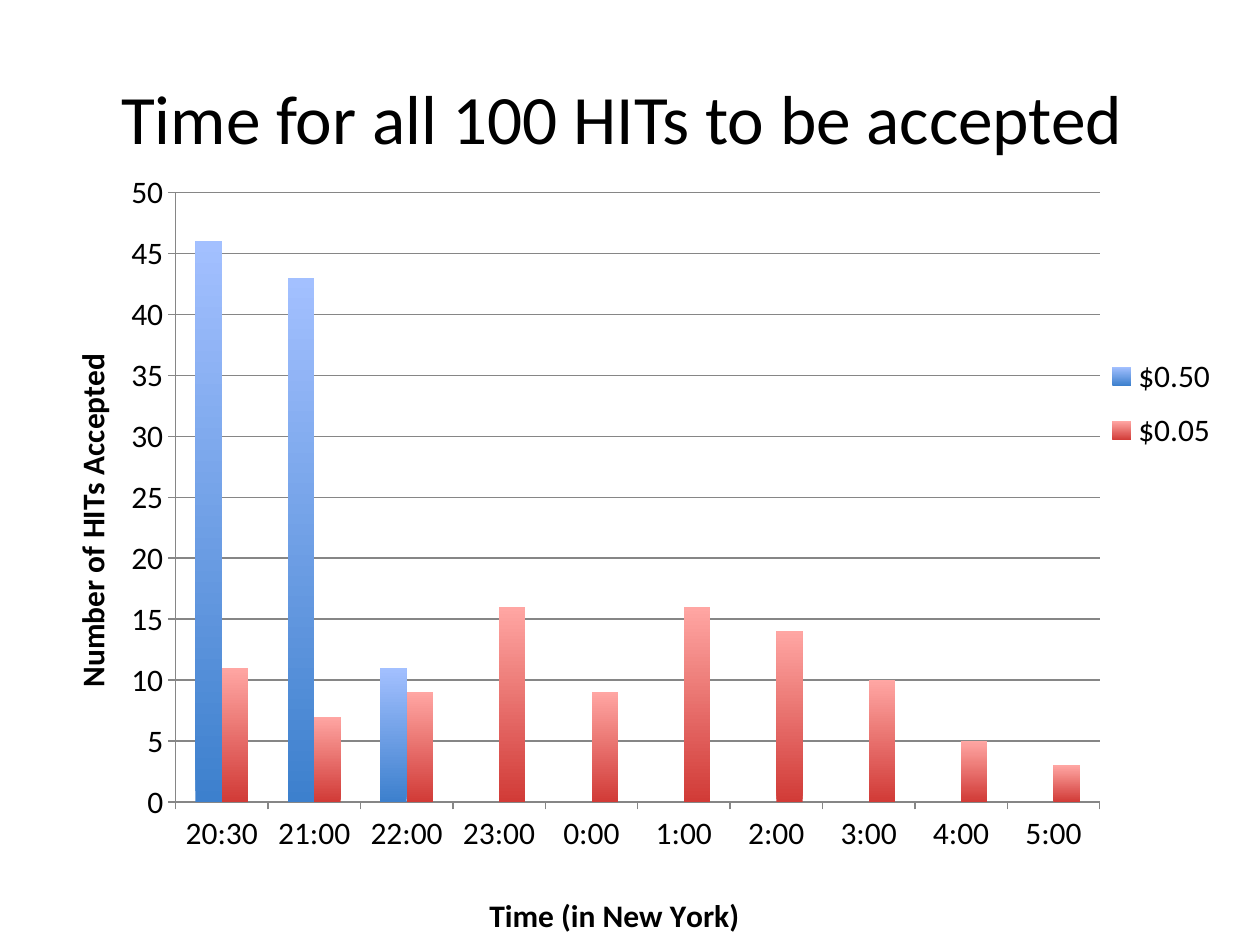
from lxml import etree
from pptx import Presentation
from pptx.chart.data import CategoryChartData
from pptx.dml.color import RGBColor
from pptx.enum.chart import XL_CHART_TYPE, XL_LEGEND_POSITION, XL_TICK_MARK
from pptx.enum.text import MSO_ANCHOR, PP_ALIGN
from pptx.oxml.ns import qn
from pptx.util import Cm, Pt

COLUMNS = XL_CHART_TYPE.COLUMN_CLUSTERED
RIGHT = XL_LEGEND_POSITION.RIGHT
OUTSIDE, NO_TICK = XL_TICK_MARK.OUTSIDE, XL_TICK_MARK.NONE
MIDDLE, CENTER = MSO_ANCHOR.MIDDLE, PP_ALIGN.CENTER

FONT = "Calibri"
COLORS = {
    "text": "000000", "line": "868686",
    "blue_top": "A3C0FF", "blue_bottom": "3D80CD",
    "red_top": "FFA6A3", "red_bottom": "D13B37",
}
TIMES = ["20:30", "21:00", "22:00", "23:00", "0:00",
         "1:00", "2:00", "3:00", "4:00", "5:00"]
SERIES = [
    ("$0.50", "blue", [46, 43, 11, 0, 0, 0, 0, 0, 0, 0]),
    ("$0.05", "red", [11, 7, 9, 16, 9, 16, 14, 10, 5, 3]),
]


def rgb(name):
    return RGBColor.from_string(COLORS[name])


def set_font(font, size, bold=False):
    values = {"name": FONT, "size": Pt(size), "bold": bold}
    for key, value in values.items():
        setattr(font, key, value)
    font.color.rgb = rgb("text")


def set_layout(el, index, inner=False, **box):
    """Place a chart part by fractions of the chart's width and height."""
    for old in el.findall(qn("c:layout")):
        el.remove(old)
    layout = etree.Element(qn("c:layout"))
    manual = etree.SubElement(layout, qn("c:manualLayout"))
    values = {"layoutTarget": "inner"} if inner else {}
    values.update(xMode="edge", yMode="edge", **box)
    for tag, value in values.items():
        etree.SubElement(manual, qn("c:" + tag)).set("val", str(value))
    el.insert(index, layout)


def add_title(s, x, y, w, h, text):
    tf = s.shapes.add_textbox(x, y, w, h).text_frame
    tf.word_wrap = True
    tf.vertical_anchor = MIDDLE
    p = tf.paragraphs[0]
    p.alignment = CENTER
    r = p.add_run()
    r.text = text
    set_font(r.font, 39.6)


def format_axis(axis, title):
    axis.major_tick_mark, axis.minor_tick_mark = OUTSIDE, NO_TICK
    axis.format.line.color.rgb = rgb("line")
    axis.format.line.width = Pt(0.75)
    r = axis.axis_title.text_frame.paragraphs[0].add_run()
    r.text = title
    set_font(r.font, 18, bold=True)


def add_hits_chart(s, x, y, w, h):
    data = CategoryChartData()
    data.categories = TIMES
    for name, _, values in SERIES:
        data.add_series(name, values)
    chart = s.shapes.add_chart(COLUMNS, x, y, w, h, data).chart
    set_font(chart.font, 18)
    chart.has_title = False

    plot = chart.plots[0]
    plot.gap_width, plot.overlap, plot.vary_by_categories = 150, 0, False
    for series, (_, hue, _) in zip(plot.series, SERIES):
        fill = series.format.fill
        fill.gradient()
        fill.gradient_angle = 90
        for stop, end in zip(fill.gradient_stops, ("bottom", "top")):
            stop.color.rgb = rgb(f"{hue}_{end}")

    format_axis(chart.category_axis, "Time (in New York)")
    axis = chart.value_axis
    format_axis(axis, "Number of HITs Accepted")
    axis.minimum_scale, axis.maximum_scale, axis.major_unit = 0, 50, 5
    axis.has_major_gridlines = True
    grid = axis.major_gridlines.format.line
    grid.color.rgb, grid.width = rgb("line"), Pt(0.75)

    chart.has_legend = True
    chart.legend.position = RIGHT
    chart.legend.include_in_layout = False
    root = chart.element
    set_layout(root.find(".//" + qn("c:plotArea")), 0, inner=True,
               x=0.12, y=0.04, w=0.75, h=0.78)
    set_layout(chart.category_axis.axis_title._element, 1, x=0.37, y=0.93)
    set_layout(axis.axis_title._element, 1, x=0.03, y=0.24)
    set_layout(root.find(".//" + qn("c:legend")), 1,
               x=0.86, y=0.23, w=0.12, h=0.16)


def main():
    prs = Presentation()
    prs.slide_width, prs.slide_height = Cm(25.4), Cm(19.05)
    s = prs.slides.add_slide(prs.slide_layouts[6])
    add_title(s, Cm(1.27), Cm(0.76), Cm(22.86), Cm(3.18),
              "Time for all 100 HITs to be accepted ")
    add_hits_chart(s, Cm(0.56), Cm(3.25), Cm(24.84), Cm(15.8))
    prs.save("out.pptx")


if __name__ == "__main__":
    main()
